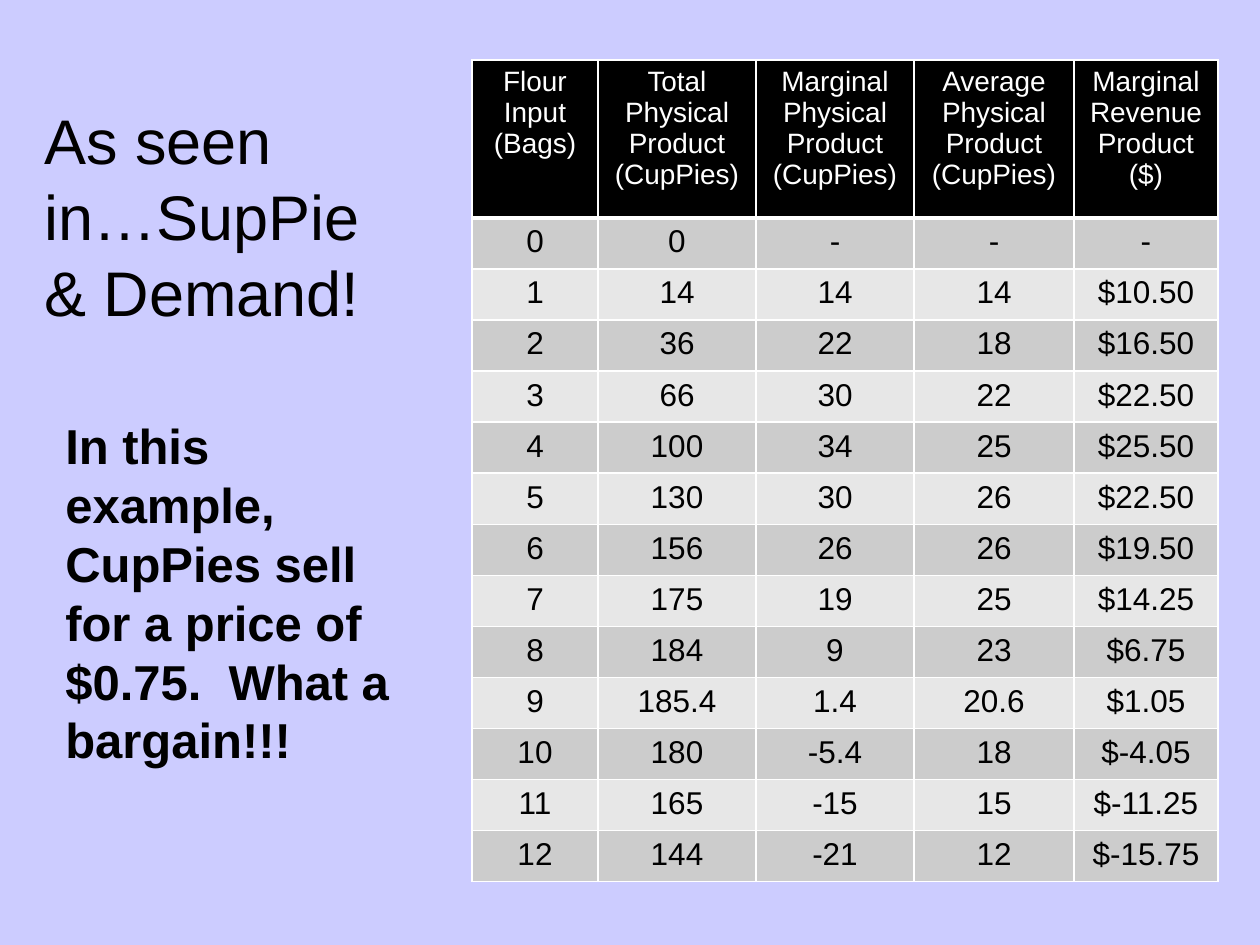
from pptx import Presentation, util as u
from pptx.dml.color import RGBColor
from pptx.enum import text
from pptx.oxml import parse_xml
from pptx.oxml.ns import nsdecls

PX = 914400 / 126  # EMU in one px
FONT = "Arial"
LAVENDER = RGBColor(0xCC, 0xCC, 0xFF)
INK = RGBColor(0x01, 0x00, 0x00)
BLACK = RGBColor(0x00, 0x00, 0x00)
WHITE = RGBColor(0xFF, 0xFF, 0xFF)
BANDS = (RGBColor(0xCC, 0xCC, 0xCC), RGBColor(0xE7, 0xE7, 0xE7))

HEADERS = (
    "Flour Input (Bags)",
    "Total Physical Product (CupPies)",
    "Marginal Physical Product (CupPies)",
    "Average Physical Product (CupPies)",
    "Marginal Revenue Product ($)",
)
ROWS = (
    ("0", "0", "-", "-", "-"),
    ("1", "14", "14", "14", "$10.50"),
    ("2", "36", "22", "18", "$16.50"),
    ("3", "66", "30", "22", "$22.50"),
    ("4", "100", "34", "25", "$25.50"),
    ("5", "130", "30", "26", "$22.50"),
    ("6", "156", "26", "26", "$19.50"),
    ("7", "175", "19", "25", "$14.25"),
    ("8", "184", "9", "23", "$6.75"),
    ("9", "185.4", "1.4", "20.6", "$1.05"),
    ("10", "180", "-5.4", "18", "$-4.05"),
    ("11", "165", "-15", "15", "$-11.25"),
    ("12", "144", "-21", "12", "$-15.75"),
)
COL_WIDTHS = (126, 158, 158, 160, 144)
HEADER_HEIGHT = 158


def px(n):
    return u.Emu(round(n * PX))


def write(p, words, size, color, bold=False):
    r = p.add_run()
    r.text = words
    font = {"name": FONT, "size": u.Pt(size), "bold": bold}
    for key, value in font.items():
        setattr(r.font, key, value)
    r.font.color.rgb = color


def add_words(s, box, words, size, color, bold=False, top=6):
    """Wrapped text that starts `top` px below the upper edge of the box."""
    tf = s.shapes.add_textbox(*map(px, box)).text_frame
    frame = {"word_wrap": True, "vertical_anchor": text.MSO_ANCHOR.TOP,
             "margin_top": px(top)}
    for key, value in frame.items():
        setattr(tf, key, value)
    p = tf.paragraphs[0]
    p.line_spacing = u.Pt(size * 1.2)
    write(p, words, size, color, bold)


def add_borders(cell, bottom):
    tc_pr = cell._tc.get_or_add_tcPr()
    for side, width in (("L", 1), ("R", 1), ("T", 1), ("B", bottom)):
        tc_pr.append(parse_xml(
            f'<a:ln{side} {nsdecls("a")} w="{u.Pt(width)}"><a:solidFill>'
            f'<a:srgbClr val="{WHITE}"/></a:solidFill></a:ln{side}>'))


def fill_cell(cell, words, size, color, fill, bottom=1):
    add_borders(cell, bottom)
    cell.fill.solid()
    cell.fill.fore_color.rgb = fill
    p = cell.text_frame.paragraphs[0]
    p.alignment = text.PP_ALIGN.CENTER
    write(p, words, size, color)


def add_product_table(s, box):
    table = s.shapes.add_table(len(ROWS) + 1, len(HEADERS), *map(px, box)).table
    for col, width in zip(table.columns, COL_WIDTHS):
        col.width = px(width)
    row_height = (box[3] - HEADER_HEIGHT) / len(ROWS)
    for i, row in enumerate(table.rows):
        row.height = px(row_height if i else HEADER_HEIGHT)

    # Header row
    for c, words in enumerate(HEADERS):
        fill_cell(table.cell(0, c), words, 16, WHITE, BLACK, bottom=3)

    # Banded body rows
    for i, values in enumerate(ROWS):
        for c, words in enumerate(values):
            fill_cell(table.cell(i + 1, c), words, 18, BLACK, BANDS[i % 2])


def main():
    prs = Presentation()
    prs.slide_width, prs.slide_height = px(1260), px(945)
    s = prs.slides.add_slide(prs.slide_layouts[6])
    s.background.fill.solid()
    s.background.fill.fore_color.rgb = LAVENDER

    # Title, table and price note
    add_words(s, (32, 30, 357, 295), "As seen in…SupPie & Demand!", 36, INK, top=72)
    add_product_table(s, (472, 60, sum(COL_WIDTHS), 822))
    add_words(s, (53, 410, 368, 369),
              "In this example, CupPies sell for a price of $0.75.  What a bargain!!!",
              28, BLACK, bold=True)
    prs.save("out.pptx")


if __name__ == "__main__":
    main()
